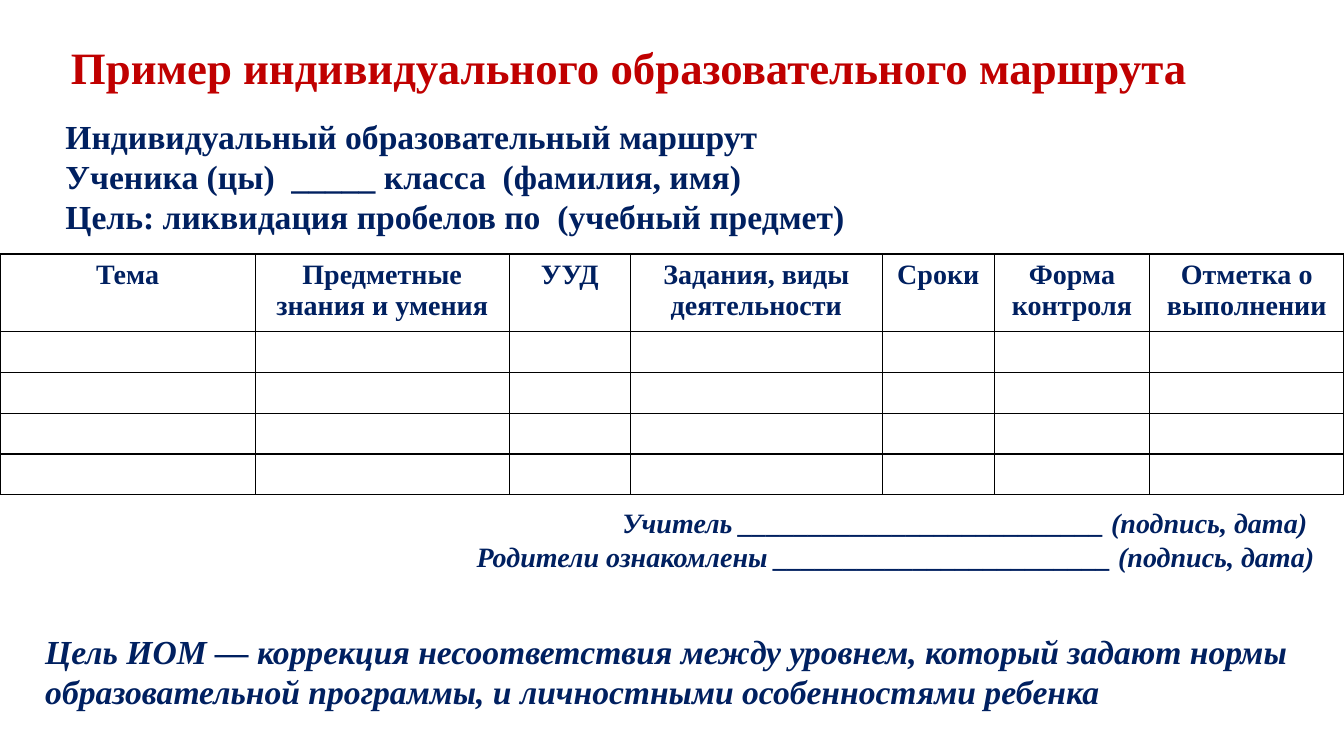
from dataclasses import dataclass

from lxml import etree
from pptx import Presentation
from pptx import util as u
from pptx.dml.color import RGBColor
from pptx.enum import text as t
from pptx.oxml import ns


@dataclass(frozen=True)
class Theme:
    font: str = "Times New Roman"
    red: str = "C00000"
    navy: str = "002060"
    white: str = "FFFFFF"
    black: str = "000000"
    title_size: int = 32
    body_size: int = 24
    small_size: int = 20


@dataclass(frozen=True)
class TextBlock:
    left: float
    top: float
    width: float
    height: float
    lines: tuple[str, ...]
    size: int
    color: str
    italic: bool = False
    align: t.PP_ALIGN = t.PP_ALIGN.LEFT
    anchor: t.MSO_ANCHOR = t.MSO_ANCHOR.TOP
    spacing: float = 1.0


@dataclass(frozen=True)
class Column:
    heading: str
    width: float


THEME = Theme()
SLIDE_WIDTH, SLIDE_HEIGHT = 33.86, 19.05
TABLE_TOP, HEADING_HEIGHT, ROW_HEIGHT, EMPTY_ROWS = 6.4, 1.95, 1.03, 4

BLOCKS = (
    TextBlock(0.18, 1.02, 31.34, 1.5,
              ("Пример индивидуального образовательного маршрута",),
              THEME.title_size, THEME.red, align=t.PP_ALIGN.CENTER,
              anchor=t.MSO_ANCHOR.MIDDLE, spacing=0.9),
    TextBlock(1.4, 2.79, 30.15, 3.33,
              ("Индивидуальный образовательный маршрут",
               "Ученика (цы)  _____ класса  (фамилия, имя)",
               "Цель: ликвидация пробелов по  (учебный предмет)"),
              THEME.body_size, THEME.navy),
    TextBlock(9.93, 12.62, 23.44, 1.96,
              ("Учитель __________________________ (подпись, дата) ",
               "Родители ознакомлены ________________________ (подпись, дата)"),
              THEME.small_size, THEME.navy, italic=True, align=t.PP_ALIGN.RIGHT),
    TextBlock(0.89, 15.77, 32.97, 2.31,
              ("Цель ИОМ — коррекция несоответствия между уровнем, который задают нормы "
               "образовательной программы, и личностными особенностями ребенка",),
              THEME.body_size, THEME.navy, italic=True),
)

COLUMNS = (
    Column("Тема", 6.43),
    Column("Предметные знания и умения", 6.4),
    Column("УУД", 3.05),
    Column("Задания, виды деятельности", 6.35),
    Column("Сроки", 2.82),
    Column("Форма контроля", 3.91),
    Column("Отметка о выполнении", 4.9),
)


def write_text(frame, lines, *, size: int, color: str, italic: bool = False,
               align=t.PP_ALIGN.LEFT, spacing: float = 1.0) -> None:
    for number, line in enumerate(lines):
        paragraph = frame.add_paragraph() if number else frame.paragraphs[0]
        paragraph.alignment = align
        paragraph.line_spacing = spacing
        run = paragraph.add_run()
        run.text = line
        run.font.name = THEME.font
        run.font.size = u.Pt(size)
        run.font.bold = True
        run.font.italic = italic
        run.font.color.rgb = RGBColor.from_string(color)


def add_block(slide, block: TextBlock) -> None:
    box = slide.shapes.add_textbox(u.Cm(block.left), u.Cm(block.top),
                                   u.Cm(block.width), u.Cm(block.height))
    frame = box.text_frame
    frame.word_wrap = True
    frame.vertical_anchor = block.anchor
    write_text(frame, block.lines, size=block.size, color=block.color,
               italic=block.italic, align=block.align, spacing=block.spacing)


def style_cell(cell) -> None:
    """Give the cell thin borders on all four sides and a plain fill."""
    properties = cell._tc.get_or_add_tcPr()
    for side in ("a:lnL", "a:lnR", "a:lnT", "a:lnB"):
        border = etree.SubElement(properties, ns.qn(side), w=str(u.Pt(1)))
        fill = etree.SubElement(border, ns.qn("a:solidFill"))
        etree.SubElement(fill, ns.qn("a:srgbClr"), val=THEME.black)
    cell.fill.solid()
    cell.fill.fore_color.rgb = RGBColor.from_string(THEME.white)


def add_route_table(slide) -> None:
    height = HEADING_HEIGHT + EMPTY_ROWS * ROW_HEIGHT
    route = slide.shapes.add_table(EMPTY_ROWS + 1, len(COLUMNS), 0, u.Cm(TABLE_TOP),
                                   u.Cm(SLIDE_WIDTH), u.Cm(height)).table
    route.first_row = route.horz_banding = False
    for number, row in enumerate(route.rows):
        row.height = u.Cm(ROW_HEIGHT if number else HEADING_HEIGHT)
    for number, column in enumerate(COLUMNS):
        route.columns[number].width = u.Cm(column.width)
        write_text(route.cell(0, number).text_frame, (column.heading,),
                   size=THEME.small_size, color=THEME.navy, align=t.PP_ALIGN.CENTER)
    for cell in route.iter_cells():
        style_cell(cell)


def main() -> None:
    deck = Presentation()
    deck.slide_width, deck.slide_height = u.Cm(SLIDE_WIDTH), u.Cm(SLIDE_HEIGHT)
    slide = deck.slides.add_slide(deck.slide_layouts[6])
    for block in BLOCKS:
        add_block(slide, block)
    add_route_table(slide)
    deck.save("out.pptx")


if __name__ == "__main__":
    main()
